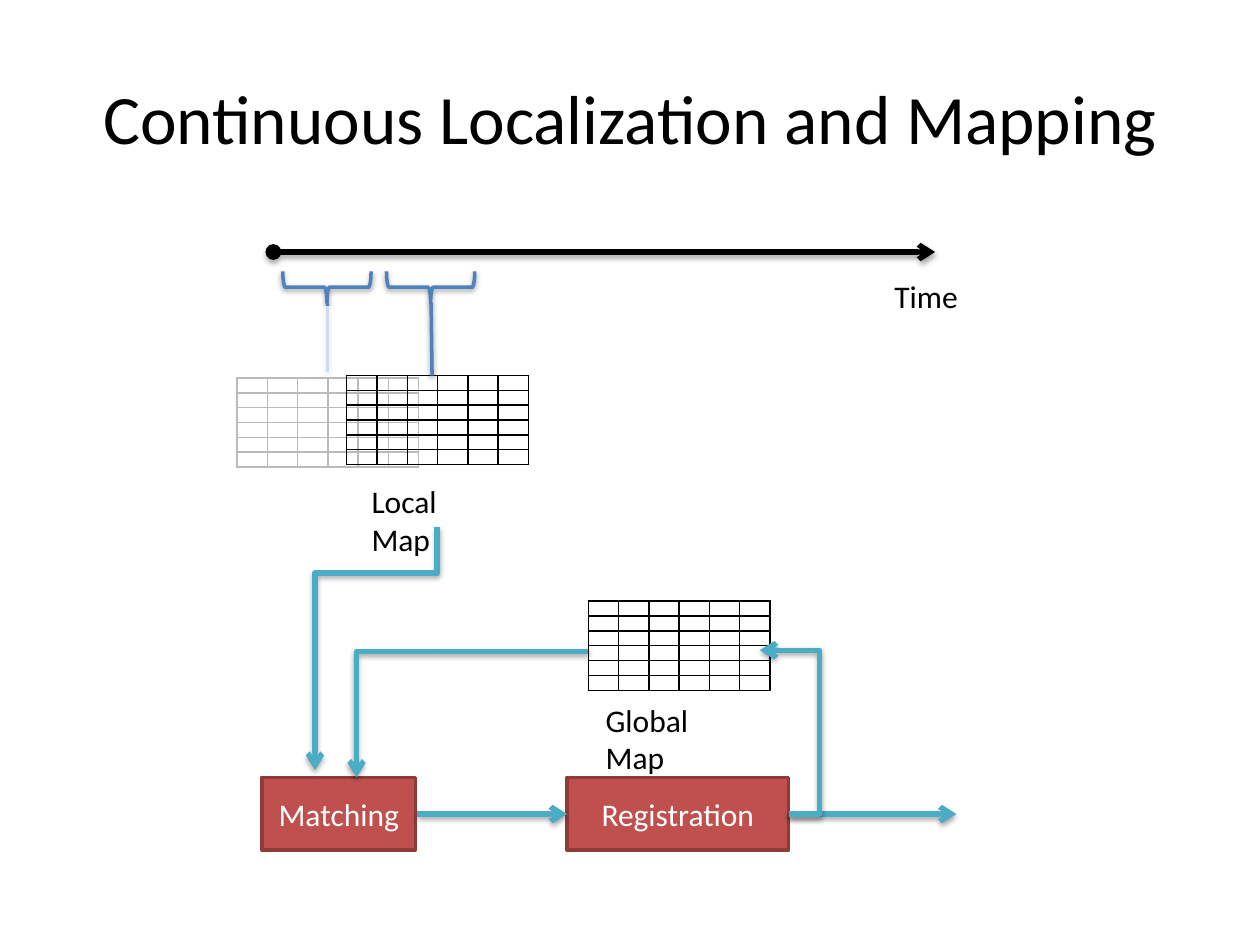
from dataclasses import dataclass

from lxml import etree
from pptx import Presentation
from pptx.dml.color import RGBColor
from pptx.enum.shapes import MSO_CONNECTOR, MSO_SHAPE
from pptx.enum.text import MSO_ANCHOR, MSO_AUTO_SIZE, PP_ALIGN
from pptx.oxml.ns import qn
from pptx.util import Cm, Pt

STRAIGHT, ELBOW = MSO_CONNECTOR.STRAIGHT, MSO_CONNECTOR.ELBOW
RECTANGLE, BRACE = MSO_SHAPE.RECTANGLE, MSO_SHAPE.RIGHT_BRACE
LEFT, CENTER = PP_ALIGN.LEFT, PP_ALIGN.CENTER
TOP, MIDDLE = MSO_ANCHOR.TOP, MSO_ANCHOR.MIDDLE
TITLE_ONLY = 5

BLACK, WHITE = "000000", "FFFFFF"
RED, DARK_RED = "C0504D", "8E3B39"
BLUE, TEAL = "4F81BD", "4BACC6"

GRID_SIZE = 6
COLUMN_WIDTH, ROW_HEIGHT = 0.61, 0.3


@dataclass
class Line:
    """A connector; adjust places the middle leg of an elbow."""
    start: tuple[float, float]
    end: tuple[float, float]
    color: str = TEAL
    width: float = 3
    head: str = ""
    tail: str = "arrow"
    adjust: float | None = None
    rotation: int = 0


@dataclass
class Box:
    left: float
    top: float
    width: float
    height: float
    text: str = ""

    def lengths(self) -> list[Cm]:
        return [Cm(value) for value in (self.left, self.top, self.width, self.height)]


TIMELINE = Line((5.51, 5.08), (18.85, 5.08), BLACK, head="oval")
FIRST_STEM = Line((6.6, 6.1), (6.6, 7.49), BLUE, 2, tail="")
SECOND_STEM = Line((8.69, 6.1), (8.71, 7.57), BLUE, 2, tail="")
FLOWS = [
    Line((11.86, 13.13), (7.19, 15.67), adjust=1),
    Line((8.41, 16.41), (11.43, 16.41)),
    Line((15.9, 16.41), (19.28, 16.41)),
    Line((15.9, 16.41), (15.32, 13.11), adjust=-1.084),
]
LOCAL_FLOW = Line((5.13, 11.84), (10.03, 14.3), adjust=0.19, rotation=90)

FIRST_BRACE = Box(6.27, 4.9, 0.64, 1.78)
SECOND_BRACE = Box(8.36, 4.9, 0.64, 1.78)
VEIL = Box(3.94, 6.17, 4.65, 3.45)
TIME_LABEL = Box(17.78, 5.46, 1.85, 1.02, "Time")
MAP_LABELS = [
    Box(7.24, 9.6, 3.15, 1.02, "Local Map"),
    Box(11.96, 14, 3.48, 1.02, "Global Map"),
]
STEPS = [
    Box(5.28, 15.67, 3.1, 1.47, "Matching"),
    Box(11.43, 15.67, 4.47, 1.47, "Registration"),
]


def rgb(color: str) -> RGBColor:
    return RGBColor.from_string(color)


def add_child(parent, tag: str, **attributes):
    return etree.SubElement(parent, qn(tag), {key: str(value) for key, value in attributes.items()})


def write_text(shape, text: str, *, size: float = 18, color: str = BLACK,
               align=LEFT, anchor=TOP, wrap: bool = True) -> None:
    frame = shape.text_frame
    frame.word_wrap = wrap
    frame.auto_size = MSO_AUTO_SIZE.NONE
    frame.vertical_anchor = anchor
    paragraph = frame.paragraphs[0]
    paragraph.alignment = align
    run = paragraph.add_run()
    run.text = text
    run.font.name = "Calibri"
    run.font.size = Pt(size)
    run.font.color.rgb = rgb(color)


def add_shadow(shape, opacity: int, distance: float) -> None:
    effects = add_child(shape._element.spPr, "a:effectLst")
    shadow = add_child(effects, "a:outerShdw", blurRad=Pt(3.1), dist=Pt(distance),
                       dir=5400000, rotWithShape=0)
    add_child(add_child(shadow, "a:srgbClr", val=BLACK), "a:alpha", val=opacity * 1000)


def add_line(slide, line: Line) -> None:
    kind = STRAIGHT if line.adjust is None else ELBOW
    points = [Cm(value) for value in (*line.start, *line.end)]
    connector = slide.shapes.add_connector(kind, *points)
    connector.line.color.rgb = rgb(line.color)
    connector.line.width = Pt(line.width)
    properties = connector._element.spPr
    outline = properties.find(qn("a:ln"))
    for tag, kind_of_end in (("a:headEnd", line.head), ("a:tailEnd", line.tail)):
        if kind_of_end:
            add_child(outline, tag, type=kind_of_end)
    if line.adjust is not None:
        guides = properties.find(qn("a:prstGeom")).find(qn("a:avLst"))
        add_child(guides, "a:gd", name="adj1", fmla=f"val {round(line.adjust * 100000)}")
    if line.rotation:
        properties.find(qn("a:xfrm")).set("rot", str(line.rotation * 60000))
    if line.width == 2:
        add_shadow(connector, 38, 1.6)
    else:
        add_shadow(connector, 35, 1.8)


def add_brace(slide, box: Box) -> None:
    brace = slide.shapes.add_shape(BRACE, *box.lengths())
    brace.rotation = 90
    brace.fill.background()
    brace.line.color.rgb = rgb(BLUE)
    brace.line.width = Pt(2)
    add_shadow(brace, 38, 1.6)


def add_step(slide, box: Box) -> None:
    step = slide.shapes.add_shape(RECTANGLE, *box.lengths())
    step.shadow.inherit = False
    step.fill.solid()
    step.fill.fore_color.rgb = rgb(RED)
    step.line.color.rgb = rgb(DARK_RED)
    step.line.width = Pt(2)
    write_text(step, box.text, color=WHITE, align=CENTER, anchor=MIDDLE)


def add_veil(slide, box: Box) -> None:
    """Fade what lies below with a translucent white rectangle."""
    veil = slide.shapes.add_shape(RECTANGLE, *box.lengths())
    veil.shadow.inherit = False
    veil.fill.solid()
    veil.fill.fore_color.rgb = rgb(WHITE)
    veil.line.fill.background()
    color = veil._element.spPr.find(qn("a:solidFill")).find(qn("a:srgbClr"))
    add_child(color, "a:alpha", val=73000)


def add_label(slide, box: Box, wrap: bool = True) -> None:
    label = slide.shapes.add_textbox(*box.lengths())
    label.text_frame.margin_right = Cm(0.4)
    write_text(label, box.text, wrap=wrap)


def add_grid_map(slide, left: float, top: float) -> None:
    box = Box(left, top, GRID_SIZE * COLUMN_WIDTH, GRID_SIZE * ROW_HEIGHT)
    table = slide.shapes.add_table(GRID_SIZE, GRID_SIZE, *box.lengths()).table
    table.first_row = table.horz_banding = False
    for cell in table.iter_cells():
        cell.margin_left = cell.margin_right = cell.margin_top = cell.margin_bottom = 0
        add_child(cell.text_frame.paragraphs[0]._p, "a:endParaRPr", sz=100)
        properties = cell._tc.get_or_add_tcPr()
        for side in "LRTB":
            border = add_child(properties, f"a:ln{side}", w=Pt(1))
            add_child(add_child(border, "a:solidFill"), "a:srgbClr", val=BLACK)
        cell.fill.background()


def main() -> None:
    presentation = Presentation()
    presentation.slide_width, presentation.slide_height = Cm(25.4), Cm(19.05)
    slide = presentation.slides.add_slide(presentation.slide_layouts[TITLE_ONLY])
    title = slide.shapes.title
    title.left, title.top, title.width, title.height = Box(1.27, 0.76, 22.86, 3.18).lengths()
    write_text(title, "Continuous Localization and Mapping", size=39.6,
               align=CENTER, anchor=MIDDLE)

    add_line(slide, TIMELINE)
    add_label(slide, TIME_LABEL, wrap=False)
    add_brace(slide, FIRST_BRACE)
    add_line(slide, FIRST_STEM)
    add_grid_map(slide, 4.78, 7.62)
    add_grid_map(slide, 11.86, 12.12)
    for label in MAP_LABELS:
        add_label(slide, label)
    for step in STEPS:
        add_step(slide, step)
    for flow in FLOWS:
        add_line(slide, flow)
    add_brace(slide, SECOND_BRACE)
    add_veil(slide, VEIL)
    add_grid_map(slide, 6.99, 7.57)
    add_line(slide, SECOND_STEM)
    add_line(slide, LOCAL_FLOW)
    presentation.save("out.pptx")


if __name__ == "__main__":
    main()
